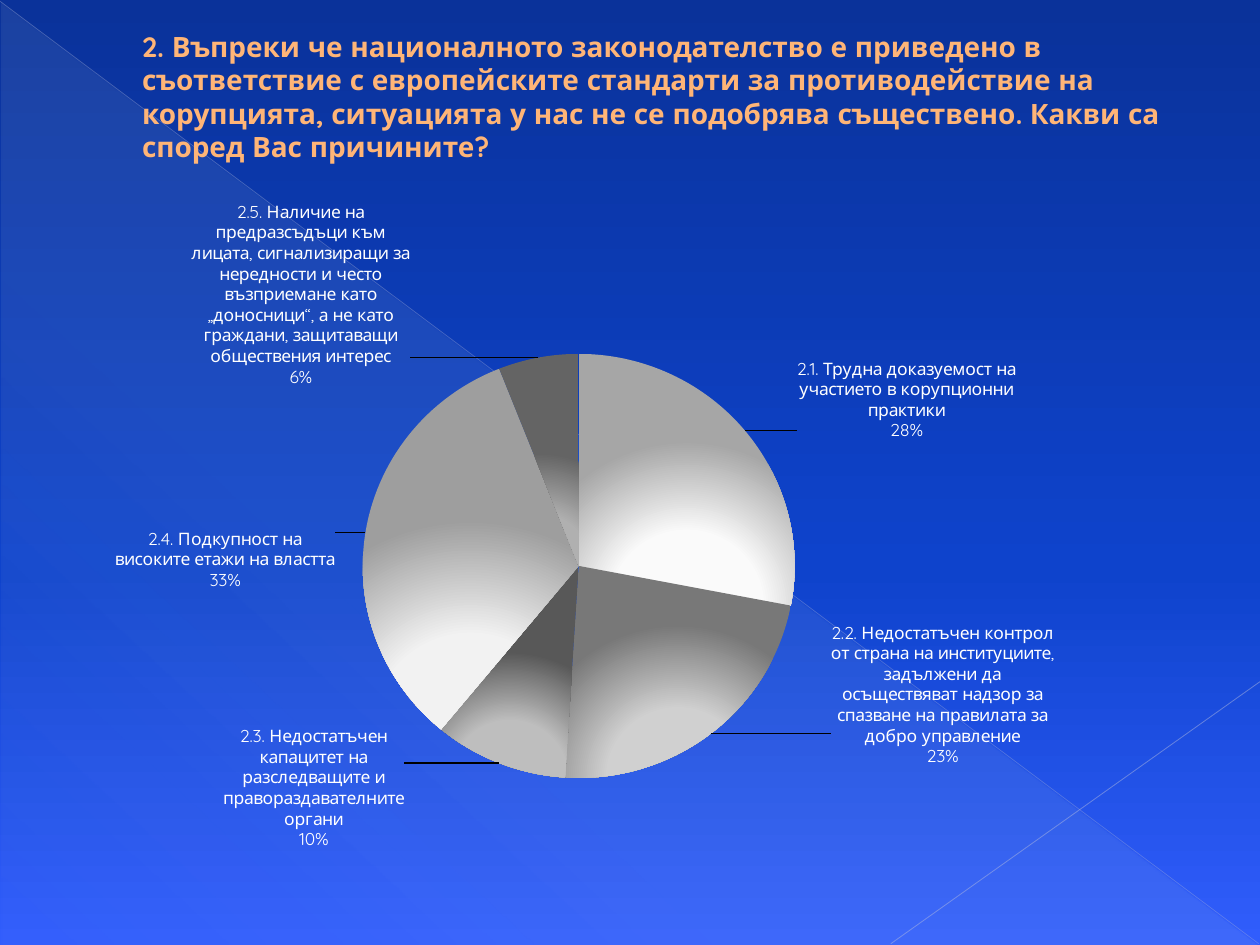
from lxml import etree
from pptx import Presentation
from pptx.chart.data import CategoryChartData
from pptx.dml.color import RGBColor
from pptx.enum.chart import XL_CHART_TYPE, XL_LABEL_POSITION
from pptx.enum.shapes import MSO_CONNECTOR, MSO_SHAPE
from pptx.enum.text import MSO_ANCHOR
from pptx.oxml import parse_xml
from pptx.oxml.ns import nsdecls, qn
from pptx.util import Inches, Pt

PIE = XL_CHART_TYPE.PIE
OUTSIDE = XL_LABEL_POSITION.OUTSIDE_END
TRIANGLE = MSO_SHAPE.RIGHT_TRIANGLE
STRAIGHT = MSO_CONNECTOR.STRAIGHT
MIDDLE = MSO_ANCHOR.MIDDLE

TITLE = ("2. Въпреки че националното законодателство е приведено в съответствие "
         "с европейските стандарти за противодействие на корупцията, ситуацията у нас "
         "не се подобрява съществено. Какви са според Вас причините?")
REASONS = [
    ("2.1. Трудна доказуемост на участието в корупционни практики",
     28, ("FAFAFA", "A6A6A6"), (0.04, 0.02)),
    ("2.2. Недостатъчен контрол от страна на институциите, задължени да осъществяват "
     "надзор за спазване на правилата за добро управление",
     23, ("D0D0D0", "787878"), (0.1, -0.16)),
    ("2.3. Недостатъчен капацитет на разследващите и правораздавателните органи",
     10, ("BEBEBE", "585858"), (-0.08, -0.06)),
    ("2.4. Подкупност на високите етажи на властта",
     33, ("F2F2F2", "9E9E9E"), (-0.02, 0.08)),
    ("2.5. Наличие на предразсъдъци към лицата, сигнализиращи за нередности и често "
     "възприемане като „доносници“, а не като граждани, защитаващи обществения интерес",
     6, ("B0B0B0", "646464"), (-0.11, 0.05)),
]
THEME = {
    "font": "Quicksand", "title": "FFB577", "title_size": 16,
    "label": "FFFFFF", "label_size": 10, "leader": "000000",
    "background": [(0, "0A329A", 100), (60, "0E43CC", 100), (100, "315DFC", 100)],
    "triangle": [(0, "CCDDEA", 10), (70, "CCDDEA", 8), (100, "CCDDEA", 1)],
}
RULES = [
    ((0, 0.01), (9.99, 7.49), "ADB6DC", 0.39, 35),
    ((10, 5.41), (7.07, 7.49), "B7BEDF", 0.47, 45),
]
PLOT = {"x": 0.26, "y": 0.24, "w": 0.39, "h": 0.58}
LINEAR = '<a:lin ang="{}" scaled="0"/>'
RADIAL = '<a:path path="circle"><a:fillToRect l="50000" t="100000" r="50000" b="0"/></a:path>'


def set_gradient(fill, owner, stops, direction):
    fill.solid()
    stop_xml = "".join(
        f'<a:gs pos="{pos * 1000}"><a:srgbClr val="{color}">'
        f'<a:alpha val="{alpha * 1000}"/></a:srgbClr></a:gs>'
        for pos, color, alpha in stops)
    solid = next(owner.iter(qn("a:solidFill")))
    solid.getparent().replace(solid, parse_xml(
        f'<a:gradFill {nsdecls("a")} rotWithShape="1"><a:gsLst>{stop_xml}</a:gsLst>'
        f'{direction}</a:gradFill>'))


def manual_layout(values, target=""):
    parts = "".join(f'<c:{key} val="{value}"/>' for key, value in values.items())
    return parse_xml(f'<c:layout {nsdecls("c")}><c:manualLayout>{target}{parts}'
                     '</c:manualLayout></c:layout>')


def add_rule(slide, start, end, color, width, alpha):
    line = slide.shapes.add_connector(STRAIGHT, *map(Inches, start + end))
    line.line.width = Pt(width)
    line.line.color.rgb = RGBColor.from_string(color)
    sp_pr = line._element.spPr
    etree.SubElement(next(sp_pr.iter(qn("a:srgbClr"))), qn("a:alpha"), val=str(alpha * 1000))
    etree.SubElement(sp_pr, qn("a:effectLst"))


def add_title(slide):
    tf = slide.shapes.add_textbox(*map(Inches, (0.5, 0.3, 9, 0.93))).text_frame
    tf.word_wrap = True
    tf.vertical_anchor = MIDDLE
    p = tf.paragraphs[0]
    p._p.get_or_add_pPr().set("marL", str(Inches(0.53)))
    r = p.add_run()
    r.text = TITLE
    r.font.name, r.font.size, r.font.bold = THEME["font"], Pt(THEME["title_size"]), True
    r.font.color.rgb = RGBColor.from_string(THEME["title"])


def style_font(font):
    font.name, font.size = THEME["font"], Pt(THEME["label_size"])
    font.color.rgb = RGBColor.from_string(THEME["label"])


def add_pie(slide):
    data = CategoryChartData()
    data.categories = [name for name, *_ in REASONS]
    data.add_series("Series 1", [value for _, value, *_ in REASONS])
    chart = slide.shapes.add_chart(PIE, *map(Inches, (0.43, 1.31, 9.15, 5.91)), data).chart
    chart.has_legend = chart.has_title = False
    style_font(chart.font)
    plot = chart.plots[0]
    plot.vary_by_categories = True
    area = chart._chartSpace.chart.plotArea
    for old in area.findall(qn("c:layout")):
        area.remove(old)
    area.insert(0, manual_layout({"xMode": "edge", "yMode": "edge", **PLOT},
                                 '<c:layoutTarget val="inner"/>'))
    series = plot.series[0]
    labels = series.data_labels
    style_font(labels.font)
    labels.show_category_name = labels.show_percentage = True
    labels.show_value = False
    labels.position = OUTSIDE
    for i, (_, _, (light, dark), (dx, dy)) in enumerate(REASONS):
        point = series.points[i]
        sp_format = point.format
        set_gradient(sp_format.fill, series._element.findall(qn("c:dPt"))[i],
                     [(0, light, 100), (45, light, 100), (100, dark, 100)], RADIAL)
        label = point.data_label
        style_font(label.font)
        label.position = OUTSIDE
        d_lbl = labels._element.findall(qn("c:dLbl"))[i]
        d_lbl.insert(1, manual_layout({"x": dx, "y": dy}))
        for tag, shown in (("showVal", 0), ("showCatName", 1), ("showPercent", 1)):
            d_lbl.find(qn(f"c:{tag}")).set("val", str(shown))
        etree.SubElement(d_lbl, qn("c:separator")).text = "\n"
    root = labels._element
    for old in root.findall(qn("c:showLeaderLines")):
        root.remove(old)
    etree.SubElement(root, qn("c:separator")).text = "\n"
    etree.SubElement(root, qn("c:showLeaderLines"), val="1")
    root.append(parse_xml(
        f'<c:leaderLines {nsdecls("c", "a")}><c:spPr><a:ln w="9525"><a:solidFill>'
        f'<a:srgbClr val="{THEME["leader"]}"/></a:solidFill></a:ln></c:spPr></c:leaderLines>'))


def main():
    prs = Presentation()
    prs.slide_width, prs.slide_height = Inches(10), Inches(7.5)
    slide = prs.slides.add_slide(prs.slide_layouts[6])
    set_gradient(slide.background.fill, slide._element, THEME["background"],
                 LINEAR.format(90 * 60000))
    sp = slide.shapes.add_shape(TRIANGLE, *map(Inches, (0.01, 0.02, 9.98, 7.48)))
    sp.shadow.inherit = False
    sp.line.fill.background()
    set_gradient(sp.fill, sp._element, THEME["triangle"], LINEAR.format(133 * 60000))
    for rule in RULES:
        add_rule(slide, *rule)
    add_title(slide)
    add_pie(slide)
    prs.save("out.pptx")


if __name__ == "__main__":
    main()
